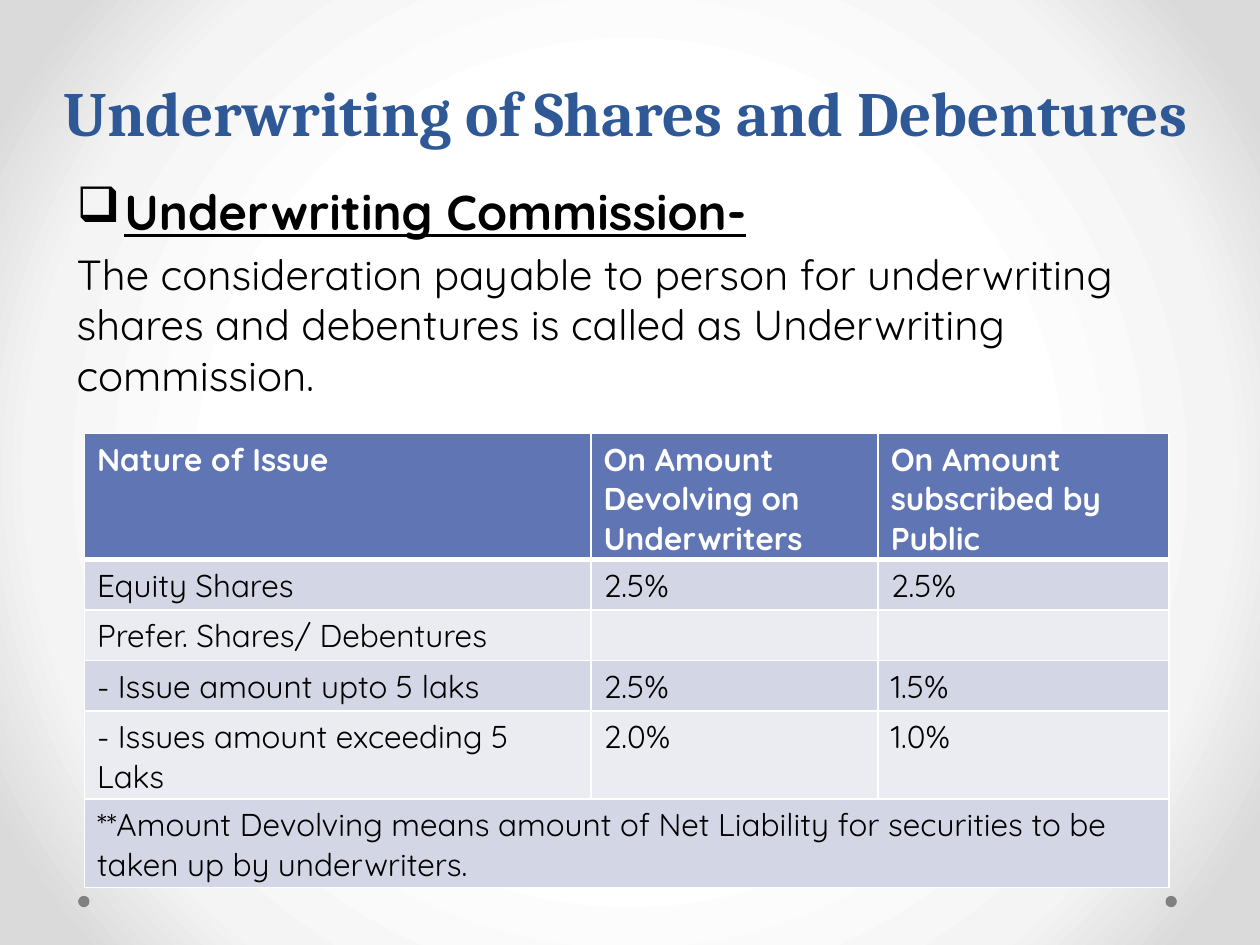
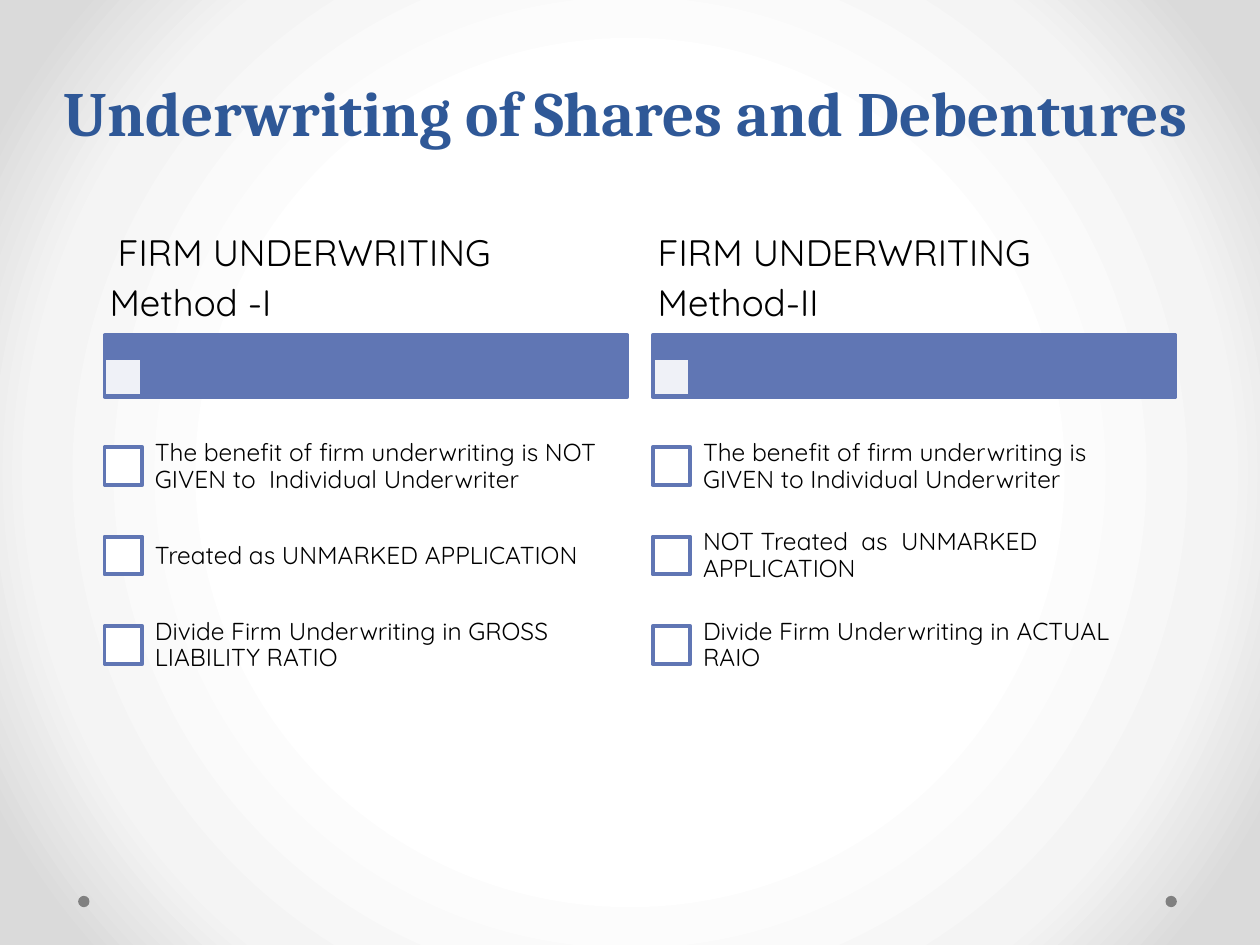
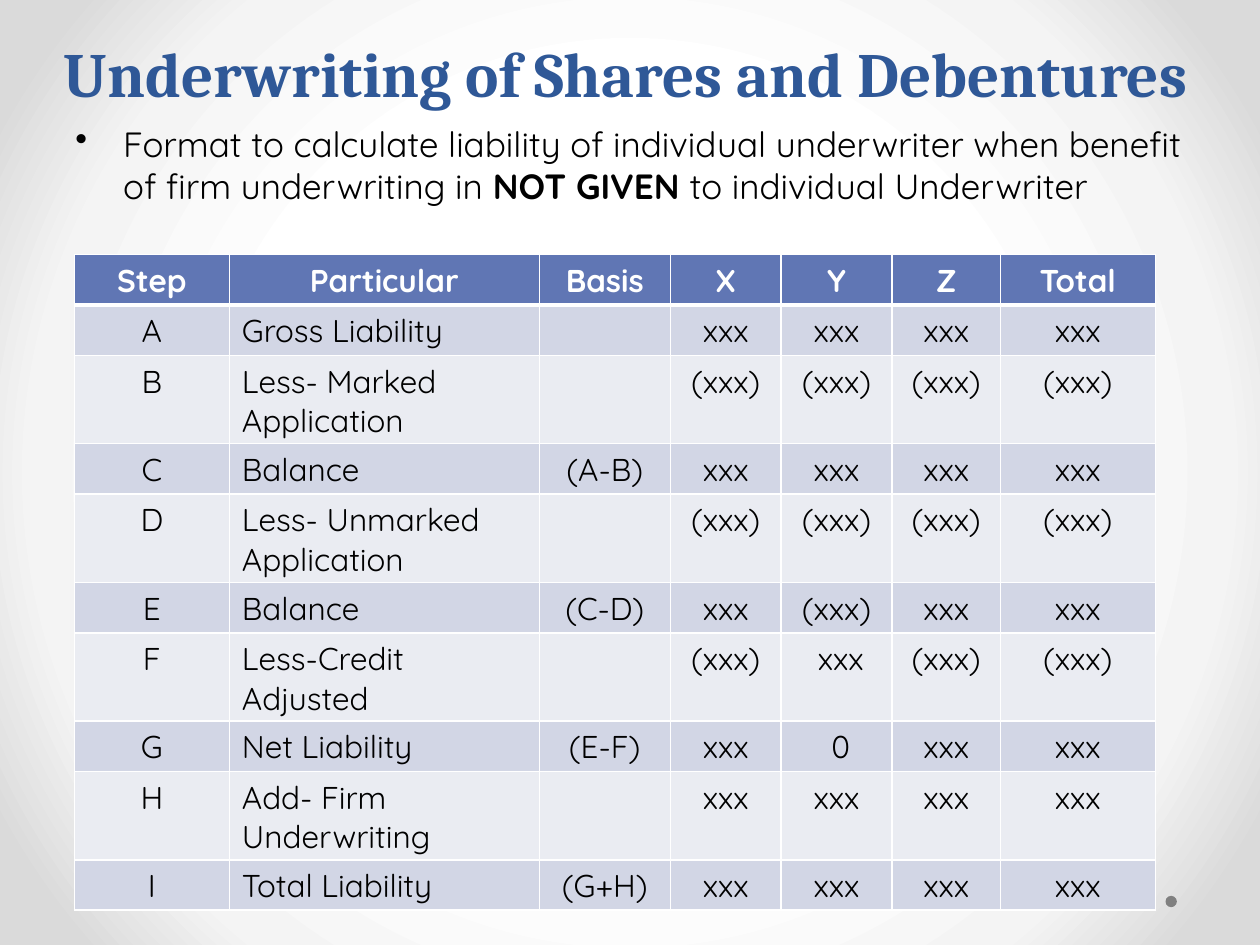
from lxml import etree
from pptx import Presentation
from pptx.dml.color import RGBColor
from pptx.enum.shapes import MSO_SHAPE
from pptx.enum.text import MSO_ANCHOR, PP_ALIGN
from pptx.oxml import parse_xml
from pptx.oxml.ns import nsdecls, qn
from pptx.util import Inches, Pt

RECT, OVAL = MSO_SHAPE.RECTANGLE, MSO_SHAPE.OVAL
LEFT, MID = PP_ALIGN.LEFT, PP_ALIGN.CENTER
TOP, CENTRE, BOTTOM = MSO_ANCHOR.TOP, MSO_ANCHOR.MIDDLE, MSO_ANCHOR.BOTTOM
HEAD, BODY = "Cambria", "Quicksand"
BLUE, NAVY, GREY = "6076B4", "2F5897", "808080"
BLACK, WHITE = "000000", "FFFFFF"
BANDS = ["EAECF2", "D2D6E5"]
rgb = RGBColor.from_string


def write(para, text, size, color=BLACK, bold=False, font=BODY):
    run = para.add_run()
    run.text = text
    run.font.size = Pt(size)
    run.font.name = font
    run.font.bold = bold
    run.font.color.rgb = rgb(color)
    return run


def place(slide, spot, kind=None, fill=WHITE, line=None, anchor=TOP, pad=(0.1, 0.05)):
    area = [Inches(v) for v in spot]
    if kind is None:
        item = slide.shapes.add_textbox(*area)
        frame = item.text_frame
        frame.word_wrap = True
        frame.vertical_anchor = anchor
        frame.margin_left = frame.margin_right = Inches(pad[0])
        frame.margin_top = frame.margin_bottom = Inches(pad[1])
        return frame
    item = slide.shapes.add_shape(kind, *area)
    item.shadow.inherit = False
    item.fill.solid()
    item.fill.fore_color.rgb = rgb(fill)
    if line:
        item.line.color.rgb = rgb(line)
        item.line.width = Pt(2.25)
    else:
        item.line.fill.background()
    return item


deck = Presentation()
deck.slide_width, deck.slide_height = Inches(10), Inches(7.5)

stops = "".join(
    f'<a:gs pos="{pos}000"><a:srgbClr val="{tone}"/></a:gs>'
    for pos, tone in [(50, WHITE), (76, "F4F4F4"), (92, "DADADA")]
)
base = deck.slide_master.element.find(qn("p:cSld"))
for old in base.findall(qn("p:bg")):
    base.remove(old)
base.insert(0, parse_xml(
    f'<p:bg {nsdecls("p", "a")}><p:bgPr><a:gradFill rotWithShape="1">'
    f'<a:gsLst>{stops}</a:gsLst><a:path path="circle">'
    '<a:fillToRect l="50000" t="50000" r="50000" b="50000"/></a:path>'
    '</a:gradFill><a:effectLst/></p:bgPr></p:bg>'
))

slides = []
for high in [1.1, 1.1, 0.79]:
    slide = deck.slides.add_slide(deck.slide_layouts[6])
    for x in [9.25, 0.62]:
        place(slide, (x, 7.11, 0.09, 0.09), OVAL, GREY)
    para = place(slide, (0.2, 0.13, 9.53, high), anchor=BOTTOM).paragraphs[0]
    para.alignment = MID
    para.line_spacing = Pt(58)
    write(para, "Underwriting of Shares and Debentures", 36, NAVY, True, HEAD)
    slides.append(slide)
rates, firm, steps = slides

intro = place(rates, (0.51, 1.39, 9.07, 1.9))
lead = intro.paragraphs[0]
write(lead, "Underwriting Commission-", 28, bold=True).font.underline = True
para = intro.add_paragraph()
para.space_before = Pt(4.8)
write(para, "The consideration payable to person for underwriting shares and debentures "
      "is called as Underwriting commission.", 24)

note = place(steps, (0.5, 0.92, 9, 1)).paragraphs[0]
write(note, "Format to calculate liability of individual underwriter when benefit "
      "of firm underwriting in ", 20)
write(note, "NOT GIVEN ", 20, bold=True)
write(note, "to individual Underwriter", 20)

for para, mark in [(lead, "❑"), (note, "•")]:
    props = para._p.get_or_add_pPr()
    props.set("marL", str(Inches(0.38)))
    props.set("indent", str(Inches(-0.38)))
    etree.SubElement(props, qn("a:buChar")).set("char", mark)

rate_rows = [
    ["Nature of Issue", "On Amount Devolving on Underwriters", "On Amount subscribed by Public"],
    ["Equity Shares", "2.5%", "2.5%"],
    ["Prefer. Shares/ Debentures", "", ""],
    ["- Issue amount upto 5 laks", "2.5%", "1.5%"],
    ["- Issues amount exceeding 5 Laks", "2.0%", "1.0%"],
    ["**Amount Devolving means amount of Net Liability for securities to be "
     "taken up by underwriters.", "", ""],
]
plus, minus = ["xxx"] * 4, ["(xxx)"] * 4
step_rows = [
    ["Step", "Particular", "Basis", "X", "Y", "Z", "Total"],
    ["A", "Gross Liability", "", *plus],
    ["B", "Less- Marked  Application", "", *minus],
    ["C", "Balance", "(A-B)", *plus],
    ["D", "Less- Unmarked Application", "", *minus],
    ["E", "Balance", "(C-D)", "xxx", "(xxx)", "xxx", "xxx"],
    ["F", "Less-Credit Adjusted", "", "(xxx)", " xxx", "(xxx)", "(xxx)"],
    ["G", "Net Liability", "(E-F)", "xxx", " 0", "xxx", "xxx"],
    ["H", "Add- Firm Underwriting", "", *plus],
    ["I", "Total Liability", "(G+H)", *plus],
]
tables = [
    (rates, 0.67, 3.44, [4.02, 2.28, 2.31], [0.94] + [0.4] * 5, rate_rows, {0, 1, 2}),
    (steps, 0.59, 2.02, [1.23, 2.46, 1.04, 0.88, 0.88, 0.86, 1.23],
     [0.39] + [0.39, 0.69] * 4 + [0.39], step_rows, {1}),
]
for slide, x, y, wides, highs, rows, flush in tables:
    grid = slide.shapes.add_table(
        len(rows), len(wides), Inches(x), Inches(y), Inches(sum(wides)), Inches(sum(highs))
    ).table
    for col, wide in zip(grid.columns, wides):
        col.width = Inches(wide)
    for r, texts in enumerate(rows):
        grid.rows[r].height = Inches(highs[r])
        for c, text in enumerate(texts):
            cell = grid.cell(r, c)
            cell.fill.solid()
            cell.fill.fore_color.rgb = rgb(BANDS[r % 2] if r else BLUE)
            para = cell.text_frame.paragraphs[0]
            para.alignment = LEFT if c in flush and (r or len(flush) > 1) else MID
            if text:
                write(para, text, 18, BLACK if r else WHITE, r == 0)
            props = cell._tc.get_or_add_tcPr()
            for i, side in enumerate("LRTB"):
                thick = (r, side) in [(0, "B"), (1, "T")]
                props.insert(i, parse_xml(
                    f'<a:ln{side} {nsdecls("a")} w="{Pt(3 if thick else 1)}"><a:solidFill>'
                    f'<a:srgbClr val="{WHITE}"/></a:solidFill></a:ln{side}>'
                ))
    if slide is rates:
        grid.cell(5, 0).merge(grid.cell(5, 2))

plans = [
    (0.83, " ", "Method -I", [
        "The benefit of firm underwriting is NOT GIVEN to  Individual Underwriter",
        "Treated as UNMARKED APPLICATION",
        "Divide Firm Underwriting in GROSS LIABILITY RATIO",
    ]),
    (5.18, "", "Method-II", [
        "The benefit of firm underwriting is GIVEN to Individual Underwriter",
        "NOT Treated  as  UNMARKED APPLICATION",
        "Divide Firm Underwriting in ACTUAL RAIO",
    ]),
]
for x, gap, method, points in plans:
    place(firm, (x, 2.66, 4.15, 0.49), RECT, BLUE, BLUE)
    tab = place(firm, (x, 2.84, 0.3, 0.3), RECT, WHITE, BLUE)
    tone = tab.fill._xPr.find(qn("a:solidFill"))[0]
    etree.SubElement(tone, qn("a:alpha")).set("val", "90000")
    frame = place(firm, (x, 1.78, 4.15, 0.88), anchor=CENTRE, pad=(0.04, 0.03))
    para = frame.paragraphs[0]
    para.line_spacing = 0.9
    if gap:
        write(para, gap, 21, font=HEAD)
    write(para, "FIRM UNDERWRITING", 21)
    para = frame.add_paragraph()
    para.line_spacing = 0.9
    para.space_before = Pt(6)
    write(para, method, 21)
    for i, point in enumerate(points):
        y = 3.35 + 0.71 * i
        place(firm, (x, y + 0.2, 0.3, 0.3), RECT, WHITE, BLUE)
        frame = place(firm, (x + 0.29, y, 3.86, 0.71), anchor=CENTRE, pad=(0.11, 0.11))
        para = frame.paragraphs[0]
        para.line_spacing = 0.9
        write(para, point, 14)

deck.save("out.pptx")
